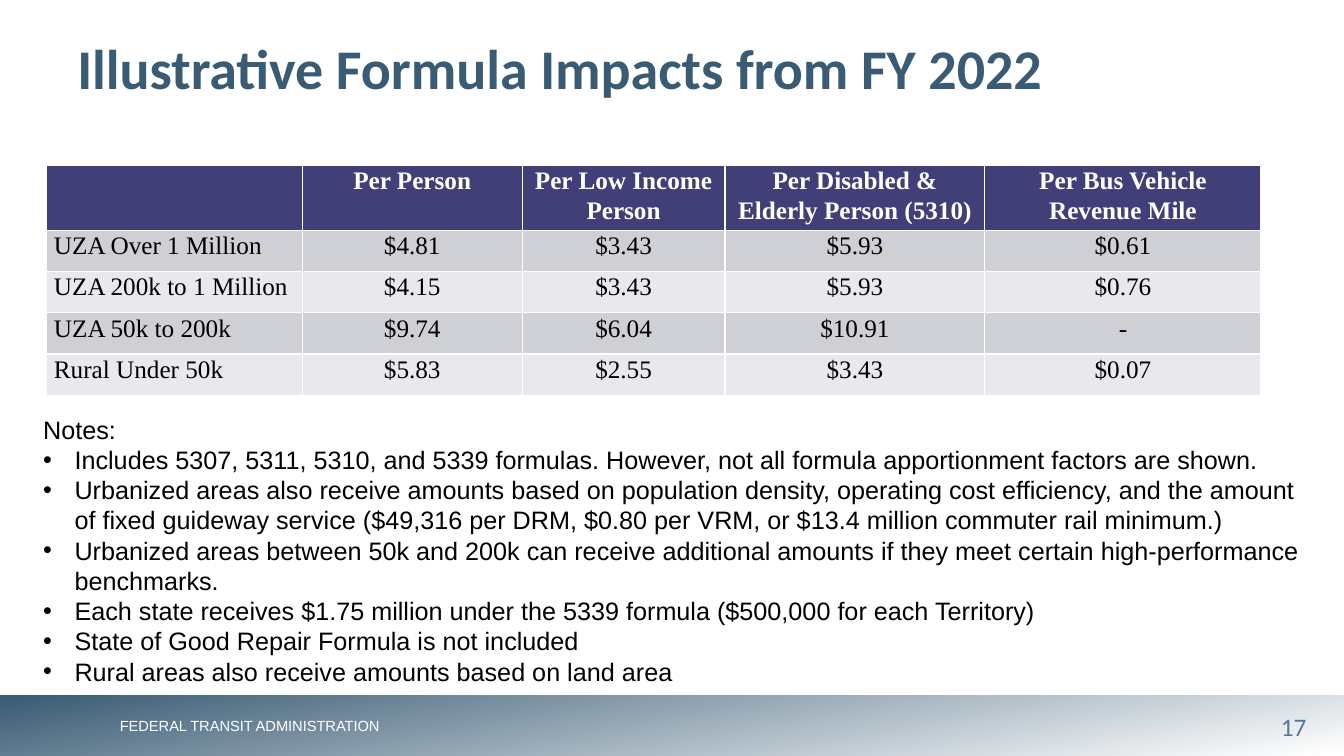
from lxml import etree
from pptx import Presentation
from pptx.dml.color import RGBColor
from pptx.enum.shapes import MSO_SHAPE
from pptx.enum.text import MSO_ANCHOR, PP_ALIGN
from pptx.oxml.ns import qn
from pptx.util import Cm, Pt

CENTER = PP_ALIGN.CENTER
LEFT = PP_ALIGN.LEFT
MIDDLE = MSO_ANCHOR.MIDDLE
TOP = MSO_ANCHOR.TOP
RECTANGLE = MSO_SHAPE.RECTANGLE

SLATE = RGBColor(0x39, 0x5B, 0x74)
STEEL = RGBColor(0x57, 0x77, 0x95)
INDIGO = RGBColor(0x41, 0x3F, 0x77)
BAND_DARK = RGBColor(0xCF, 0xCF, 0xD6)
BAND_LIGHT = RGBColor(0xE9, 0xE8, 0xEC)
WHITE = RGBColor(0xFF, 0xFF, 0xFF)
BLACK = RGBColor(0, 0, 0)

COLUMN_WIDTHS = [6.45, 5.54, 5.11, 6.55, 6.96]
HEADER_HEIGHT = 1.09
ROW_HEIGHT = 1.04
FORMULA_ROWS = [
    ["", "Per Person", "Per Low Income Person",
     "Per Disabled & Elderly Person (5310)", "Per Bus Vehicle Revenue Mile"],
    ["UZA Over 1 Million", "$4.81", "$3.43", "$5.93", "$0.61"],
    ["UZA 200k to 1 Million", "$4.15", "$3.43", "$5.93", "$0.76"],
    ["UZA 50k to 200k", "$9.74", "$6.04", "$10.91", "-"],
    ["Rural Under 50k", "$5.83", "$2.55", "$3.43", "$0.07"],
]
NOTES = [
    "Includes 5307, 5311, 5310, and 5339 formulas. However, not all formula "
    "apportionment factors are shown.",
    "Urbanized areas also receive amounts based on population density, operating cost "
    "efficiency, and the amount of fixed guideway service ($49,316 per DRM, $0.80 per "
    "VRM, or $13.4 million commuter rail minimum.)",
    "Urbanized areas between 50k and 200k can receive additional amounts if they meet "
    "certain high-performance benchmarks.",
    "Each state receives $1.75 million under the 5339 formula ($500,000 for each Territory)",
    "State of Good Repair Formula is not included",
    "Rural areas also receive amounts based on land area",
]


def format_runs(paragraph, font_name, size, color, bold=False):
    """Apply one font to every run of a paragraph."""
    for run in paragraph.runs:
        run.font.name = font_name
        run.font.size = Pt(size)
        run.font.color.rgb = color
        run.font.bold = bold


def add_text(slide, box, text, font_name, size, color, bold=False,
             alignment=LEFT, anchor=TOP, wrap=True):
    """Add a text box with one paragraph and return its text frame."""
    text_frame = slide.shapes.add_textbox(*map(Cm, box)).text_frame
    text_frame.word_wrap = wrap
    text_frame.vertical_anchor = anchor
    text_frame.text = text
    paragraph = text_frame.paragraphs[0]
    paragraph.alignment = alignment
    format_runs(paragraph, font_name, size, color, bold)
    return text_frame


def add_bullet(text_frame, text):
    """Append a bulleted note with a hanging indent."""
    paragraph = text_frame.add_paragraph()
    properties = paragraph._p.get_or_add_pPr()
    properties.set("marL", str(Cm(0.79)))
    properties.set("indent", str(-Cm(0.79)))
    etree.SubElement(properties, qn("a:buFont")).set("typeface", "Arial")
    etree.SubElement(properties, qn("a:buChar")).set("char", "•")
    paragraph.text = text
    format_runs(paragraph, "Arial", 18, BLACK)


def add_footer_band(slide):
    """Add the gradient band along the bottom edge."""
    band = slide.shapes.add_shape(RECTANGLE, Cm(0), Cm(17.52), Cm(33.87), Cm(1.53))
    band.shadow.inherit = False
    band.line.fill.background()
    band.fill.gradient()
    band.fill.gradient_angle = 280
    for stop, color, position in zip(band.fill.gradient_stops, (SLATE, WHITE), (0, 0.99)):
        stop.color.rgb = color
        stop.position = position


def fill_cell(cell, text, fill_color, font_color, bold, alignment):
    """Write and format one table cell."""
    cell.fill.solid()
    cell.fill.fore_color.rgb = fill_color
    cell.margin_left = cell.margin_right = Cm(0.19)
    cell.margin_top = cell.margin_bottom = Cm(0)
    cell.text = text
    paragraph = cell.text_frame.paragraphs[0]
    paragraph.alignment = alignment
    paragraph.line_spacing = 1.07
    format_runs(paragraph, "Times New Roman", 18, font_color, bold)


def add_formula_table(slide):
    """Add the banded table of formula amounts."""
    height = HEADER_HEIGHT + ROW_HEIGHT * (len(FORMULA_ROWS) - 1)
    table = slide.shapes.add_table(
        len(FORMULA_ROWS), len(COLUMN_WIDTHS),
        Cm(1.17), Cm(4.17), Cm(sum(COLUMN_WIDTHS)), Cm(height)).table
    for column, width in zip(table.columns, COLUMN_WIDTHS):
        column.width = Cm(width)
    for row_index, values in enumerate(FORMULA_ROWS):
        is_header = row_index == 0
        table.rows[row_index].height = Cm(HEADER_HEIGHT if is_header else ROW_HEIGHT)
        band_color = BAND_DARK if row_index % 2 else BAND_LIGHT
        for column_index, value in enumerate(values):
            fill_cell(table.cell(row_index, column_index), value,
                      INDIGO if is_header else band_color,
                      WHITE if is_header else BLACK, is_header,
                      CENTER if column_index else LEFT)


def main():
    """Build and save the formula impacts slide."""
    presentation = Presentation()
    presentation.slide_width = Cm(33.87)
    presentation.slide_height = Cm(19.05)
    slide = presentation.slides.add_slide(presentation.slide_layouts[6])
    add_footer_band(slide)
    add_text(slide, (31.32, 17.81, 2.57, 0.97), "17", "Calibri", 18, STEEL,
             alignment=CENTER)
    add_text(slide, (2.77, 17.93, 7.24, 0.71), "FEDERAL TRANSIT ADMINISTRATION",
             "Arial", 10.5, WHITE, wrap=False)
    add_text(slide, (1.7, 0.41, 29.49, 2.54), "Illustrative Formula Impacts from FY 2022",
             "Calibri", 40, SLATE, bold=True, anchor=MIDDLE)
    add_formula_table(slide)
    notes_frame = add_text(slide, (0.84, 10.31, 32.18, 7.95), "Notes:", "Arial", 18, BLACK)
    for note in NOTES:
        add_bullet(notes_frame, note)
    presentation.save("out.pptx")


if __name__ == "__main__":
    main()
